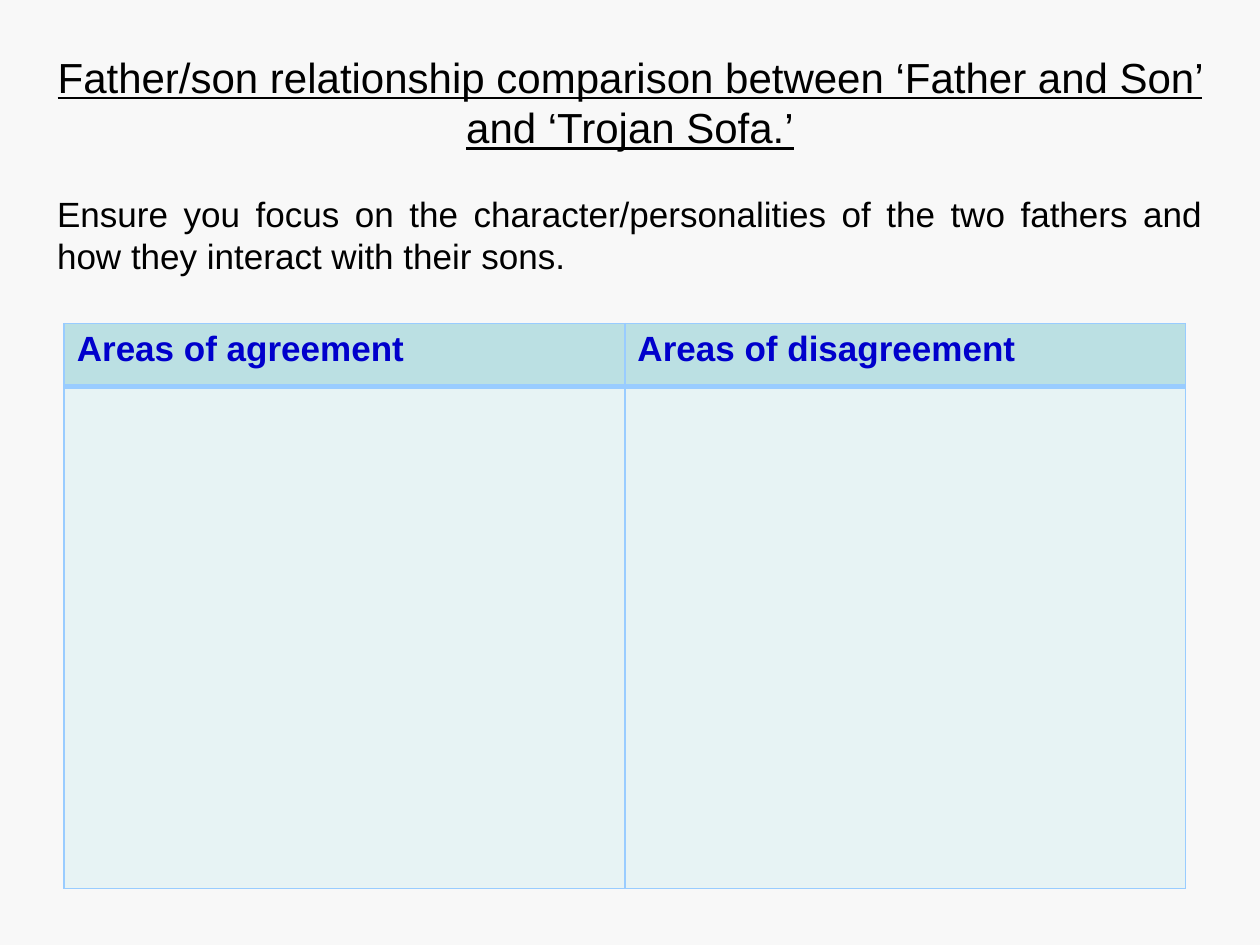
import pptx
import pptx.dml.color
import pptx.enum.text
import pptx.oxml
import pptx.oxml.ns
import pptx.util

Pt = pptx.util.Pt
ALIGN = pptx.enum.text.PP_ALIGN
COLORS = {"back": "F8F8F8", "ink": "000000", "head": "0000CC",
          "top": "BBE0E3", "body": "E7F3F4", "line": "99CCFF"}
TITLE = "Father/son relationship comparison between ‘Father and Son’ and ‘Trojan Sofa.’"
TASK = "Ensure you focus on the character/personalities of the two fathers and how they interact with their sons."
HEADS = ["Areas of agreement", "Areas of disagreement"]


def paint(fill, name):
    """Fill with a named solid colour."""
    fill.solid()
    fill.fore_color.rgb = pptx.dml.color.RGBColor.from_string(COLORS[name])


def style(para, size, name, bold=False, under=False):
    """Set the font of a whole paragraph."""
    font = para.font
    font.name, font.size = "Arial", Pt(size)
    font.bold, font.underline = bold, under
    paint(font.fill, name)


def edge(cell, widths):
    """Draw the left, right, top and bottom borders of a cell."""
    props = cell._tc.get_or_add_tcPr()
    for i, (side, width) in enumerate(zip("LRTB", widths)):
        line = pptx.oxml.parse_xml(
            f'<a:ln{side} {pptx.oxml.ns.nsdecls("a")} w="{Pt(width)}">'
            f'<a:solidFill><a:srgbClr val="{COLORS["line"]}"/></a:solidFill>'
            f'</a:ln{side}>')
        props.insert(i, line)


def add_intro(slide, left, top, width, height):
    """Place the title and the task below it."""
    frame = slide.shapes.add_textbox(
        Pt(left), Pt(top), Pt(width), Pt(height)).text_frame
    frame.word_wrap = True
    title = frame.paragraphs[0]
    title.text, title.alignment = TITLE, ALIGN.CENTER
    style(title, 24, "ink", under=True)
    task = frame.add_paragraph()
    task.text, task.alignment = TASK, ALIGN.JUSTIFY
    task.space_before = Pt(23)
    style(task, 20, "ink")


def add_grid(slide, left, top, width, height):
    """Place the two-column comparison table."""
    head = 36
    table = slide.shapes.add_table(
        2, len(HEADS), Pt(left), Pt(top), Pt(width), Pt(height)).table
    table.rows[0].height = Pt(head)
    table.rows[1].height = Pt(height - head)
    for col, text in enumerate(HEADS):
        table.columns[col].width = Pt(width / len(HEADS))
        cell, space = table.cell(0, col), table.cell(1, col)
        cell.text = text
        style(cell.text_frame.paragraphs[0], 20, "head", bold=True)
        paint(cell.fill, "top")
        paint(space.fill, "body")
        edge(cell, (1, 1, 1, 3))
        edge(space, (1, 1, 3, 1))


def main():
    """Build and save the slide."""
    deck = pptx.Presentation()
    deck.slide_width, deck.slide_height = Pt(720), Pt(540)
    slide = deck.slides.add_slide(deck.slide_layouts[6])
    paint(slide.background.fill, "back")
    add_intro(slide, 25.5, 25.9, 669, 196.6)
    add_grid(slide, 36.7, 185, 640.8, 322.6)
    deck.save("out.pptx")


if __name__ == "__main__":
    main()
